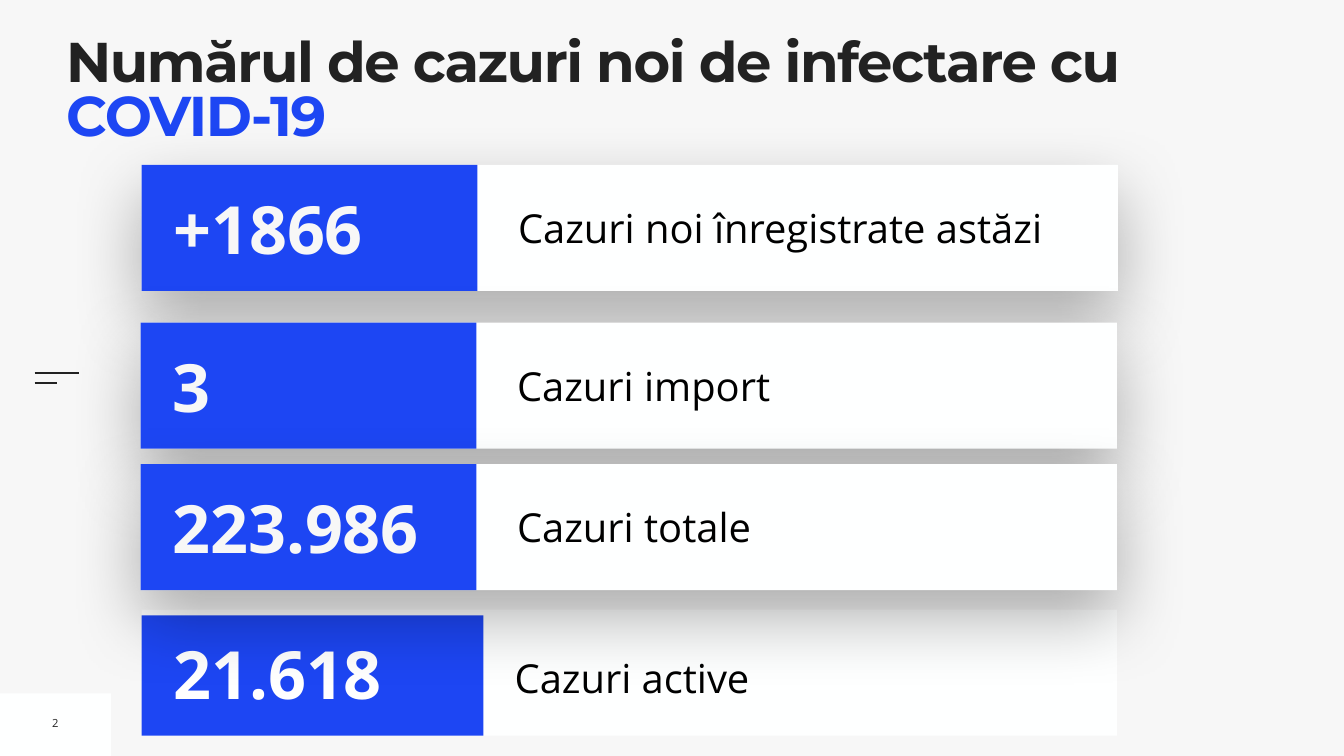
from dataclasses import dataclass

import pptx
import pptx.dml.color
import pptx.enum.shapes
import pptx.enum.text
import pptx.oxml
import pptx.oxml.ns
import pptx.oxml.xmlchemy
import pptx.util
from pptx.util import Cm

ALIGN = pptx.enum.text.PP_ALIGN
ANCHOR = pptx.enum.text.MSO_ANCHOR
AUTO_SIZE = pptx.enum.text.MSO_AUTO_SIZE


@dataclass(frozen=True)
class Theme:
    background: str = "F7F7F7"
    panel: str = "FEFFFF"
    accent: str = "1D46F3"
    ink: str = "222222"
    label: str = "000000"
    white: str = "FFFFFF"
    heading_font: str = "Montserrat"
    body_font: str = "Open Sans"
    title_size: int = 80
    number_size: int = 95
    label_size: int = 57
    page_size: int = 16


@dataclass(frozen=True)
class Card:
    """One figure with its label; lengths in centimetres."""
    number: str
    label: str
    left: float
    top: float
    width: float = 49.2
    accent_top: float = 0
    accent_width: float = 16.92
    number_color: str = "F7F7F7"
    label_box: tuple = (18.72, 1.69, 29.87, 2.95)
    label_inset: float = 0.25
    label_spacing: float = 1
    shadow: bool = True


THEME = Theme()
CARD_HEIGHT = 6.35
CARDS = [
    Card("21.618", "Cazuri active", 7.14, 30.73, width=49.15, accent_top=0.28,
         accent_width=17.22, number_color=THEME.white,
         label_box=(18.8, 1.47, 29.41, 3.18), label_inset=0,
         label_spacing=1.3, shadow=False),
    Card("+1866", "Cazuri noi înregistrate astăzi", 7.14, 8.31),
    Card("3", "Cazuri import", 7.09, 16.26),
    Card("223.986", "Cazuri totale", 7.09, 23.39),
]


def rgb(value):
    return pptx.dml.color.RGBColor.from_string(value)


def style(font, name, size, color, bold=False):
    font.name = name
    font.size = pptx.util.Pt(size)
    font.bold = bold
    font.color.rgb = rgb(color)


def add_panel(page, left, top, width, height, color):
    panel = page.shapes.add_shape(
        pptx.enum.shapes.MSO_SHAPE.RECTANGLE,
        Cm(left), Cm(top), Cm(width), Cm(height))
    panel.shadow.inherit = False
    panel.fill.solid()
    panel.fill.fore_color.rgb = rgb(color)
    panel.line.fill.background()
    return panel


def add_text_box(page, left, top, width, height, inset, anchor=ANCHOR.MIDDLE,
                 wrap=True, auto_size=AUTO_SIZE.SHAPE_TO_FIT_TEXT):
    """Add an empty text box and return its first paragraph."""
    box = page.shapes.add_textbox(Cm(left), Cm(top), Cm(width), Cm(height))
    frame = box.text_frame
    frame.word_wrap = wrap
    frame.auto_size = auto_size
    frame.vertical_anchor = anchor
    frame.margin_left = frame.margin_right = Cm(inset)
    frame.margin_top = frame.margin_bottom = Cm(inset)
    return frame.paragraphs[0]


def add_soft_shadow(shape):
    """Cast a blurred black shadow straight down."""
    blur, distance = pptx.util.Pt(100), pptx.util.Pt(40)
    effects = shape._element.spPr.find(pptx.oxml.ns.qn("a:effectLst"))
    effects.append(pptx.oxml.parse_xml(
        f'<a:outerShdw {pptx.oxml.ns.nsdecls("a")} blurRad="{blur}" '
        f'dist="{distance}" dir="5400000" rotWithShape="0">'
        '<a:srgbClr val="000000"><a:alpha val="30000"/></a:srgbClr>'
        '</a:outerShdw>'))


def add_title(page, left, top, width, height):
    para = add_text_box(page, left, top, width, height, 0,
                        ANCHOR.TOP, auto_size=AUTO_SIZE.NONE)
    para.line_spacing = 0.8
    for text, color in (("Numărul de cazuri noi de infectare cu ", THEME.ink),
                        ("COVID-19", THEME.accent)):
        span = para.add_run()
        span.text = text
        style(span.font, THEME.heading_font, THEME.title_size, color, True)
        span._r.get_or_add_rPr().set("spc", "-200")


def add_card(page, card):
    panel = add_panel(page, card.left, card.top, card.width, CARD_HEIGHT,
                      THEME.panel)
    if card.shadow:
        add_soft_shadow(panel)

    x, y, width, height = card.label_box
    label = add_text_box(page, card.left + x, card.top + y, width, height,
                         card.label_inset)
    label.text = card.label
    label.line_spacing = card.label_spacing
    style(label.font, THEME.body_font, THEME.label_size, THEME.label)

    add_panel(page, card.left, card.top + card.accent_top, card.accent_width,
              CARD_HEIGHT - card.accent_top, THEME.accent)
    number = add_text_box(page, card.left + 1.35, card.top + 0.89,
                          15.32, 4.57, 0.25)
    number.text = card.number
    style(number.font, THEME.body_font, THEME.number_size,
          card.number_color, True)


def add_menu_mark(page, left, top, width):
    """Draw a long rule above one of half its length."""
    for offset, length in ((0, width), (0.46, width / 2)):
        rule = page.shapes.add_connector(
            pptx.enum.shapes.MSO_CONNECTOR.STRAIGHT,
            Cm(left), Cm(top + offset), Cm(left + length), Cm(top + offset))
        rule.line.color.rgb = rgb(THEME.ink)
        rule.line.width = pptx.util.Pt(3)
        rule._element.spPr.append(
            pptx.oxml.xmlchemy.OxmlElement("a:effectLst"))


def add_page_number(page, left, top, width, height):
    add_panel(page, left, top, width, height, THEME.panel)
    para = add_text_box(page, left + 2.36, top + 0.84, 0.86, 1.3, 0.25,
                        wrap=False)
    para.text = "2"
    para.alignment = ALIGN.CENTER
    style(para.font, THEME.body_font, THEME.page_size, THEME.ink)


def main():
    deck = pptx.Presentation()
    deck.slide_width, deck.slide_height = Cm(67.74), Cm(38.1)
    page = deck.slides.add_slide(deck.slide_layouts[6])
    page.background.fill.solid()
    page.background.fill.fore_color.rgb = rgb(THEME.background)

    add_page_number(page, 0, 34.95, 5.59, 3.15)
    add_menu_mark(page, 1.75, 18.82, 2.24)
    add_title(page, 3.33, 1.98, 60.81, 4.01)
    for card in CARDS:
        add_card(page, card)
    deck.save("out.pptx")


if __name__ == "__main__":
    main()
